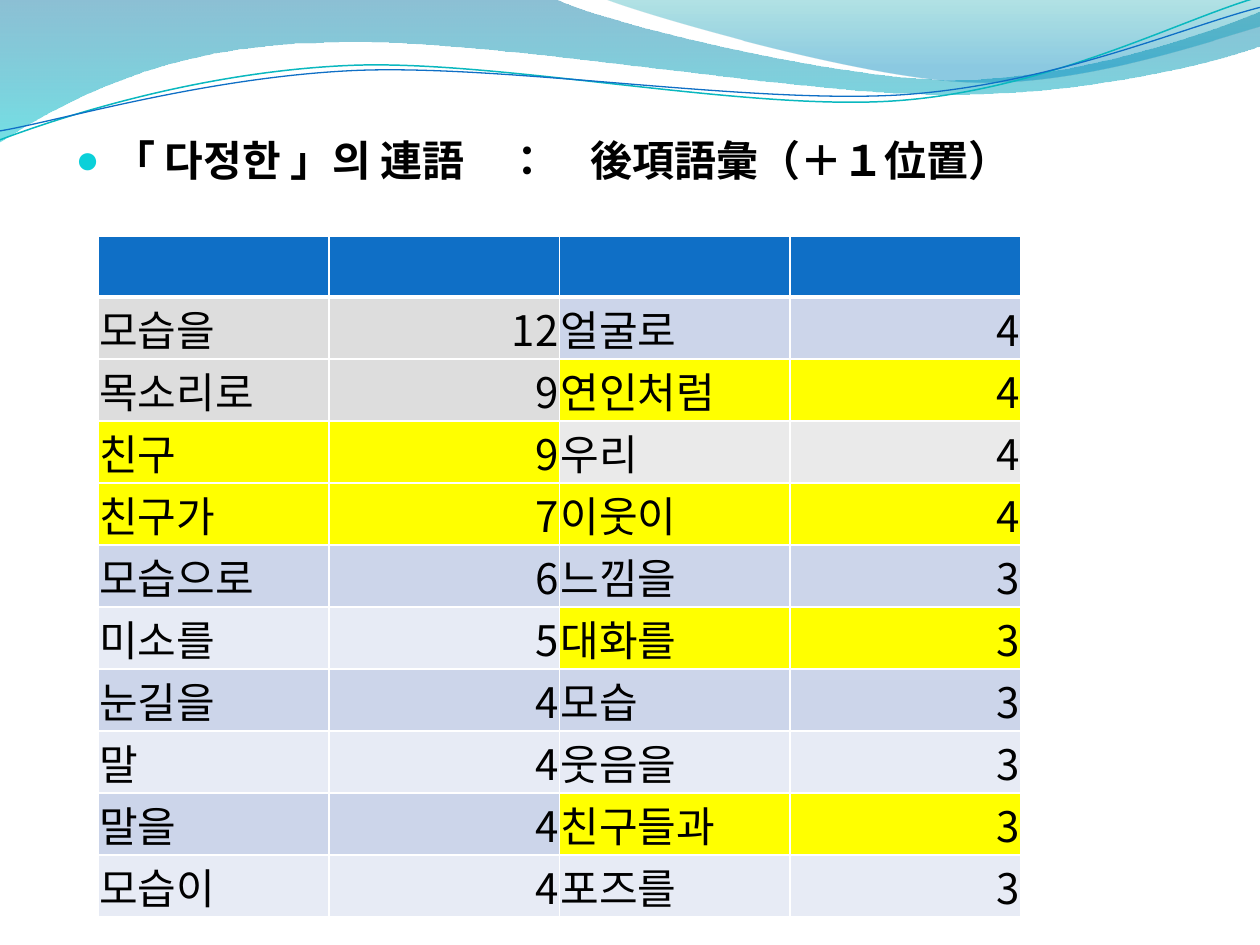
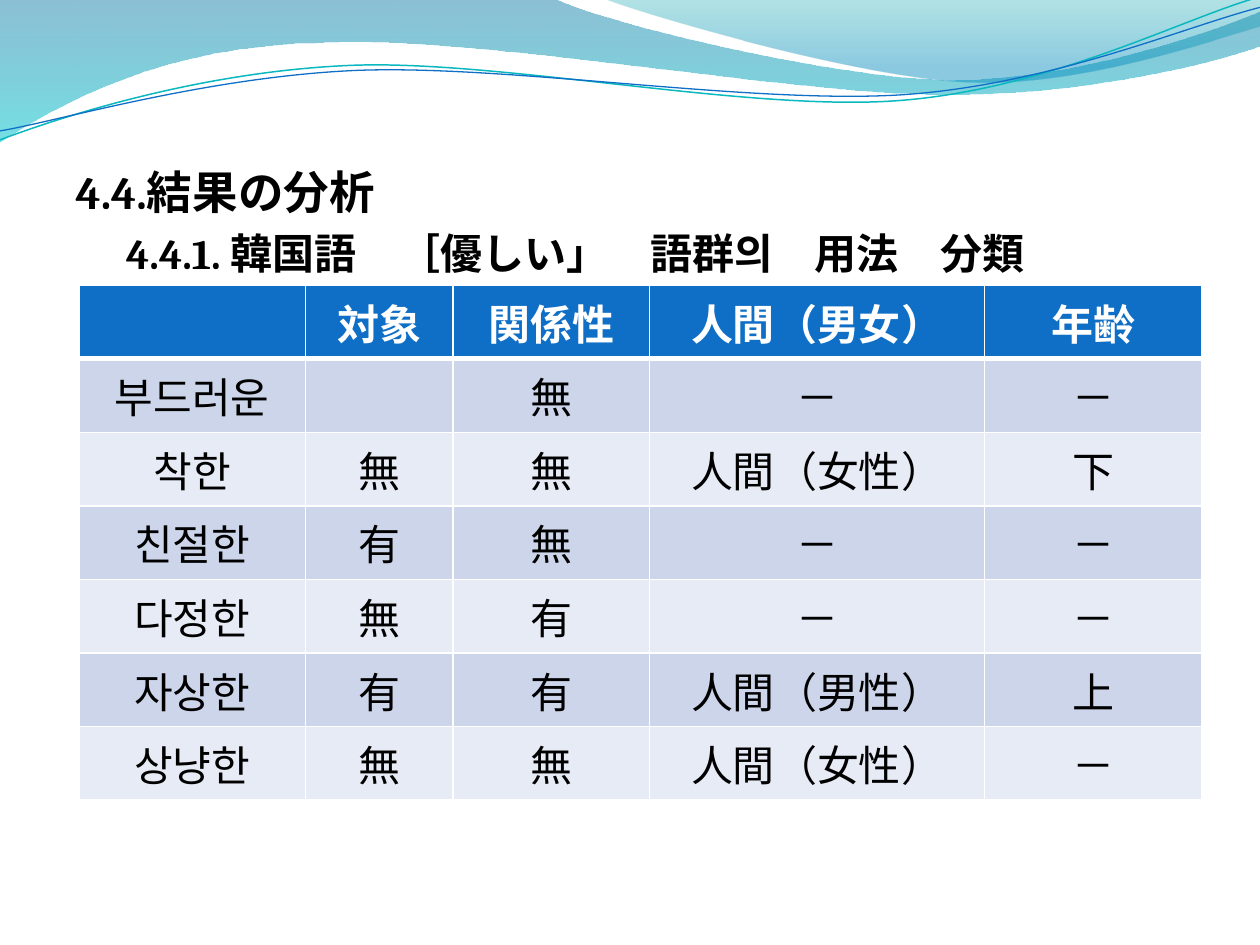
from lxml import etree
from pptx import Presentation
from pptx import util as u
from pptx.dml.color import RGBColor
from pptx.enum import lang, text
from pptx.oxml.ns import qn

# Colours
BLACK = RGBColor(0x00, 0x00, 0x00)
WHITE = RGBColor(0xFF, 0xFF, 0xFF)
BLUE = RGBColor(0x0F, 0x6F, 0xC6)
TEAL = RGBColor(0x0A, 0xB8, 0xBF)
CYAN = RGBColor(0x0B, 0xD0, 0xD9)
BANDS = RGBColor(0xCC, 0xD5, 0xEA), RGBColor(0xE7, 0xEB, 0xF5)
YELLOW = RGBColor(0xFF, 0xFF, 0x00)
GREY = RGBColor(0xDD, 0xDD, 0xDD)
PALE_GREY = RGBColor(0xEA, 0xEA, 0xEA)

CJK_FONT = "Noto Sans CJK JP"

# Slide 1: following words, their counts and an optional highlight
COLLOCATION_HEADING = "「 다정한 」의 連語　：　後項語彙（＋１位置）"
LEFT_WORDS = [
    ("모습을", 12, GREY), ("목소리로", 9, GREY), ("친구", 9, YELLOW),
    ("친구가", 7, YELLOW), ("모습으로", 6, None), ("미소를", 5, None),
    ("눈길을", 4, None), ("말", 4, None), ("말을", 4, None), ("모습이", 4, None),
]
RIGHT_WORDS = [
    ("얼굴로", 4, None), ("연인처럼", 4, YELLOW), ("우리", 4, PALE_GREY),
    ("이웃이", 4, YELLOW), ("느낌을", 3, None), ("대화를", 3, YELLOW),
    ("모습", 3, None), ("웃음을", 3, None), ("친구들과", 3, YELLOW), ("포즈를", 3, None),
]

# Slide 2: usage of each adjective
ANALYSIS_HEADING = "4.4.結果の分析"
USAGE_HEADING = "4.4.1. 韓国語　［優しい」　語群의　用法　分類"
USAGE = [
    ("", "対象", "関係性", "人間（男女）", "年齢"),
    ("부드러운", "", "無", "－", "－"),
    ("착한", "無", "無", "人間（女性）", "下"),
    ("친절한", "有", "無", "－", "－"),
    ("다정한", "無", "有", "－", "－"),
    ("자상한", "有", "有", "人間（男性）", "上"),
    ("상냥한", "無", "無", "人間（女性）", "－"),
]

# Top waves in cm: a pair is a straight step, six numbers are a curve
WAVE_BANDS = [
    ([(0, -0.03), (11.18, -0.03), (12.09, 0.43, 16.87, 1.6, 19.25, 1.6),
      (21.67, 1.6, 24.33, 0.66, 25.4, 0.23), (25.43, 0.91),
      (24.97, 1.12, 22.1, 1.93, 18.95, 1.9), (15.8, 1.9, 9.7, 0.71, 6.53, 0.86),
      (3.28, 0.89, 1.17, 2.11, -0.03, 2.87), (0, -0.03)],
     [(0, RGBColor(0x00, 0x74, 0xA1), 45), (1, RGBColor(0x00, 0xC6, 0xCF), 55)]),
    ([(12.17, -0.03), (12.93, 0.28, 17.32, 1.57, 19.53, 1.65),
      (21.74, 1.75, 24.41, 0.81, 25.4, 0.53), (25.4, 0), (12.17, -0.03)],
     [(0, RGBColor(0x00, 0xA1, 0xA9), 30), (0.8, RGBColor(0x00, 0x8B, 0xBF), 45)]),
]
WAVE_LINES = [
    ([(0, 2.82), (1.22, 2.36, 4.01, 1.45, 7.04, 1.32),
      (10.03, 1.19, 15.06, 2.26, 18.11, 2.03),
      (21.16, 1.8, 23.83, 0.38, 25.35, -0.05)], TEAL, 0.85),
    ([(0, 2.64), (1.19, 2.44, 4.17, 1.55, 7.19, 1.42),
      (10.24, 1.3, 15.16, 2.11, 18.21, 1.91),
      (21.23, 1.7, 23.9, 0.53, 25.4, 0.15)], BLUE, 0.75),
]

# Text formats
HEADING = {"name": "Cambria", "size": u.Pt(24), "bold": True,
           "language_id": lang.MSO_LANGUAGE_ID.JAPANESE}
SECTION = HEADING | {"size": u.Pt(26)}
COUNT_TEXT = {"name": CJK_FONT, "size": u.Pt(24), "bold": False}
USAGE_TEXT = {"name": "Arial", "size": u.Pt(24), "bold": False}
USAGE_HEAD = USAGE_TEXT | {"bold": True}
TIGHT = {"margin_left": u.Cm(0.02), "margin_right": u.Cm(0.02), "margin_top": u.Cm(0.02),
         "margin_bottom": 0, "vertical_anchor": text.MSO_ANCHOR.MIDDLE}


def apply(target, formats):
    for key, value in formats.items():
        setattr(target, key, value)


def write(paragraph, words, formats, colour):
    run = paragraph.add_run()
    run.text = words
    apply(run.font, formats)
    run.font.color.rgb = colour
    etree.SubElement(run.font._element, qn("a:ea"), typeface=CJK_FONT)


# Waves
def draw_wave(slide, steps, closed):
    """Build the outline through the end points, then bend its curved steps."""
    (start_x, start_y), *rest = steps
    builder = slide.shapes.build_freeform(u.Cm(start_x), u.Cm(start_y))
    builder.add_line_segments([(u.Cm(step[-2]), u.Cm(step[-1])) for step in rest], close=closed)
    wave = builder.convert_to_shape()
    wave.shadow.inherit = False
    for segment, step in zip(list(wave.element.iter(qn("a:lnTo"))), rest):
        if len(step) == 6:
            segment.tag = qn("a:cubicBezTo")
            for i in (2, 0):
                control = etree.Element(qn("a:pt"), x=str(u.Cm(step[i]) - wave.left),
                                        y=str(u.Cm(step[i + 1]) - wave.top))
                segment.insert(0, control)
    return wave


def draw_waves(slide):
    waves = []
    for steps, stops in WAVE_BANDS:
        band = draw_wave(slide, steps, True)
        band.line.fill.background()
        band.fill.gradient()
        band.fill.gradient_angle = 270
        for stop, (position, colour, opacity) in zip(band.fill.gradient_stops, stops):
            stop.position = position
            stop.color.rgb = colour
        shades = band.element.spPr.find(qn("a:gradFill")).iter(qn("a:srgbClr"))
        for shade, (position, colour, opacity) in zip(shades, stops):
            etree.SubElement(shade, qn("a:alpha"), val=str(opacity * 1000))
        waves.append(band)
    for steps, colour, width in WAVE_LINES:
        line = draw_wave(slide, steps, False)
        line.fill.background()
        line.line.color.rgb = colour
        line.line.width = u.Pt(width)
        waves.append(line)
    return waves


def share_waves(slide):
    """Move the waves behind everything on the common layout."""
    layout = slide.slide_layout
    for placeholder in list(layout.placeholders):
        if placeholder.placeholder_format.idx >= 10:
            layout.placeholders.element.remove(placeholder.element)
    for depth, wave in enumerate(draw_waves(slide)):
        layout.shapes.element.insert(2 + depth, wave.element)


# Headings in the body placeholder
def set_indent(paragraph, left, first, bullet=None):
    properties = paragraph._p.get_or_add_pPr()
    properties.set("marL", str(u.Cm(left)))
    properties.set("indent", str(u.Cm(first)))
    if bullet is None:
        etree.SubElement(properties, qn("a:buNone"))
        return
    colour = etree.SubElement(properties, qn("a:buClr"))
    etree.SubElement(colour, qn("a:srgbClr"), val=str(CYAN))
    etree.SubElement(properties, qn("a:buSzPct"), val="95000")
    etree.SubElement(properties, qn("a:buFont"), typeface="Arial")
    etree.SubElement(properties, qn("a:buChar"), char=bullet)


def add_headings(slide, top, height, headings):
    title = slide.shapes.title
    title.element.getparent().remove(title.element)
    body = slide.placeholders[1]
    apply(body, {"left": u.Cm(1.27), "top": u.Cm(top),
                 "width": u.Cm(22.86), "height": u.Cm(height)})
    frame = body.text_frame
    frame.auto_size = text.MSO_AUTO_SIZE.NONE
    for i, (words, level, formats, indent) in enumerate(headings):
        paragraph = frame.add_paragraph() if i else frame.paragraphs[0]
        paragraph.level = level
        set_indent(paragraph, *indent)
        write(paragraph, words, formats, BLACK)


# Tables
def add_grid(slide, left, top, widths, heights):
    table = slide.shapes.add_table(len(heights), len(widths), u.Cm(left), u.Cm(top),
                                   u.Cm(sum(widths)), u.Cm(sum(heights))).table
    for column, width in zip(table.columns, widths):
        column.width = u.Cm(width)
    for row, height in zip(table.rows, heights):
        row.height = u.Cm(height)
    return table


def paint(cell, row, highlight=None):
    properties = cell._tc.get_or_add_tcPr()
    thick = {0: "lnB", 1: "lnT"}.get(row)
    for side in ("lnL", "lnR", "lnT", "lnB"):
        border = etree.SubElement(properties, qn(f"a:{side}"),
                                  w=str(u.Pt(3 if side == thick else 1)))
        fill = etree.SubElement(border, qn("a:solidFill"))
        etree.SubElement(fill, qn("a:srgbClr"), val=str(WHITE))
    cell.fill.solid()
    cell.fill.fore_color.rgb = highlight or (BANDS[(row - 1) % 2] if row else BLUE)


def fill_cell(cell, words, formats, colour, alignment):
    paragraph = cell.text_frame.paragraphs[0]
    paragraph.alignment = alignment
    if words:
        write(paragraph, words, formats, colour)


def add_counts(slide):
    table = add_grid(slide, 1.98, 4.77, [4.65] * 4, [1.22] + [1.05] * len(LEFT_WORDS))
    for column in range(4):
        paint(table.cell(0, column), 0)
    for side, words in enumerate((LEFT_WORDS, RIGHT_WORDS)):
        for row, (word, count, highlight) in enumerate(words, 1):
            for offset, (value, alignment) in enumerate(
                    ((word, text.PP_ALIGN.LEFT), (str(count), text.PP_ALIGN.RIGHT))):
                cell = table.cell(row, 2 * side + offset)
                paint(cell, row, highlight)
                apply(cell, TIGHT)
                fill_cell(cell, value, COUNT_TEXT, BLACK, alignment)


def add_usage(slide):
    table = add_grid(slide, 1.59, 5.75, [4.57, 2.97, 3.96, 6.76, 4.37], [1.28] * len(USAGE))
    for row, values in enumerate(USAGE):
        formats, colour = (USAGE_TEXT, BLACK) if row else (USAGE_HEAD, WHITE)
        for column, value in enumerate(values):
            cell = table.cell(row, column)
            paint(cell, row)
            fill_cell(cell, value, formats, colour, text.PP_ALIGN.CENTER)


def main():
    deck = Presentation()
    deck.slide_width, deck.slide_height = u.Cm(25.4), u.Cm(19.05)
    layout = deck.slide_layouts[1]

    collocations = deck.slides.add_slide(layout)
    share_waves(collocations)
    add_headings(collocations, 2.59, 14.99,
                 [(COLLOCATION_HEADING, 1, HEADING, (0.76, -0.76, "●"))])
    add_counts(collocations)

    analysis = deck.slides.add_slide(layout)
    add_headings(analysis, 3.18, 14.4,
                 [(ANALYSIS_HEADING, 0, SECTION, (0.76, -0.76)),
                  (USAGE_HEADING, 1, HEADING, (2.44, -1.42))])
    add_usage(analysis)

    deck.save("out.pptx")


if __name__ == "__main__":
    main()
